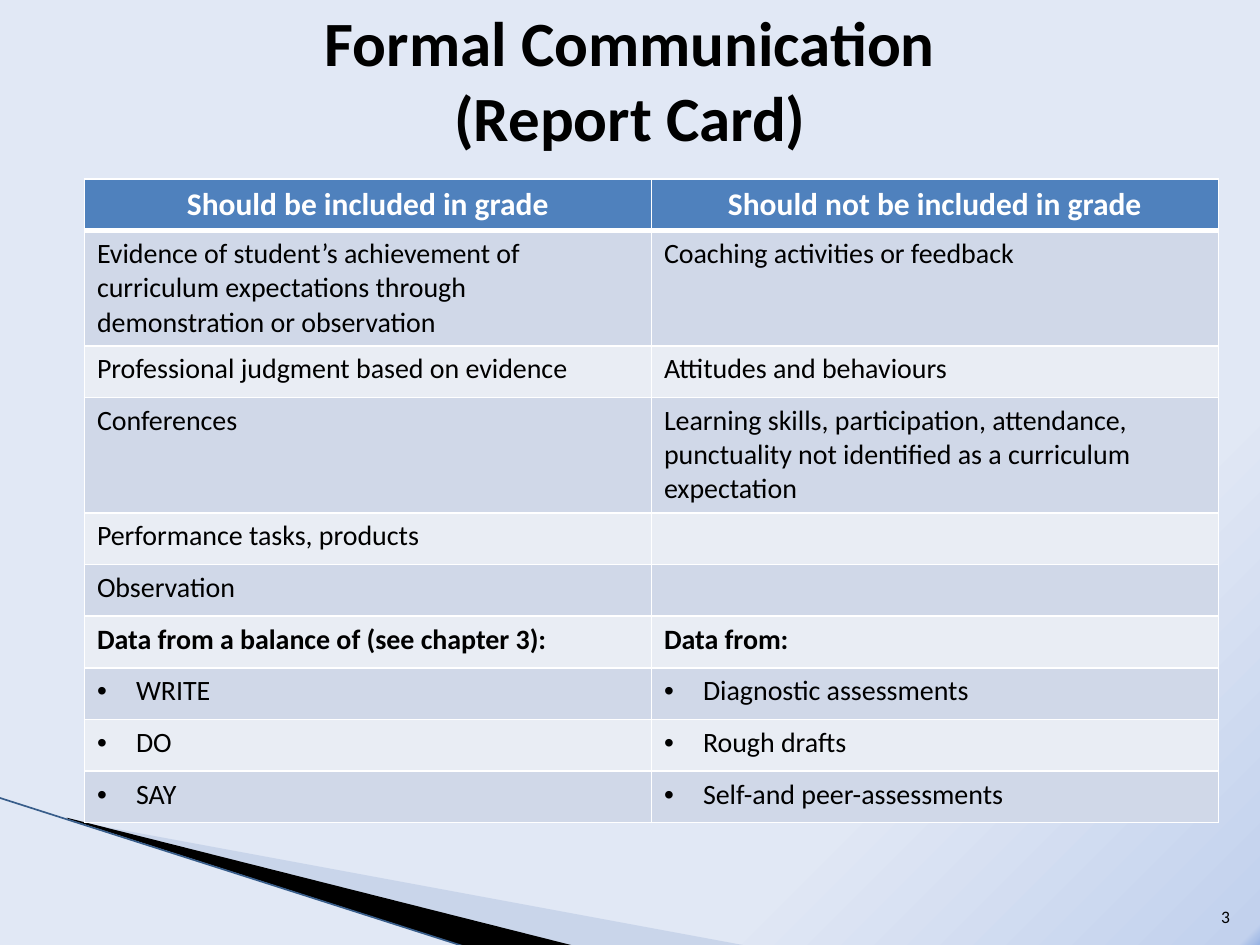
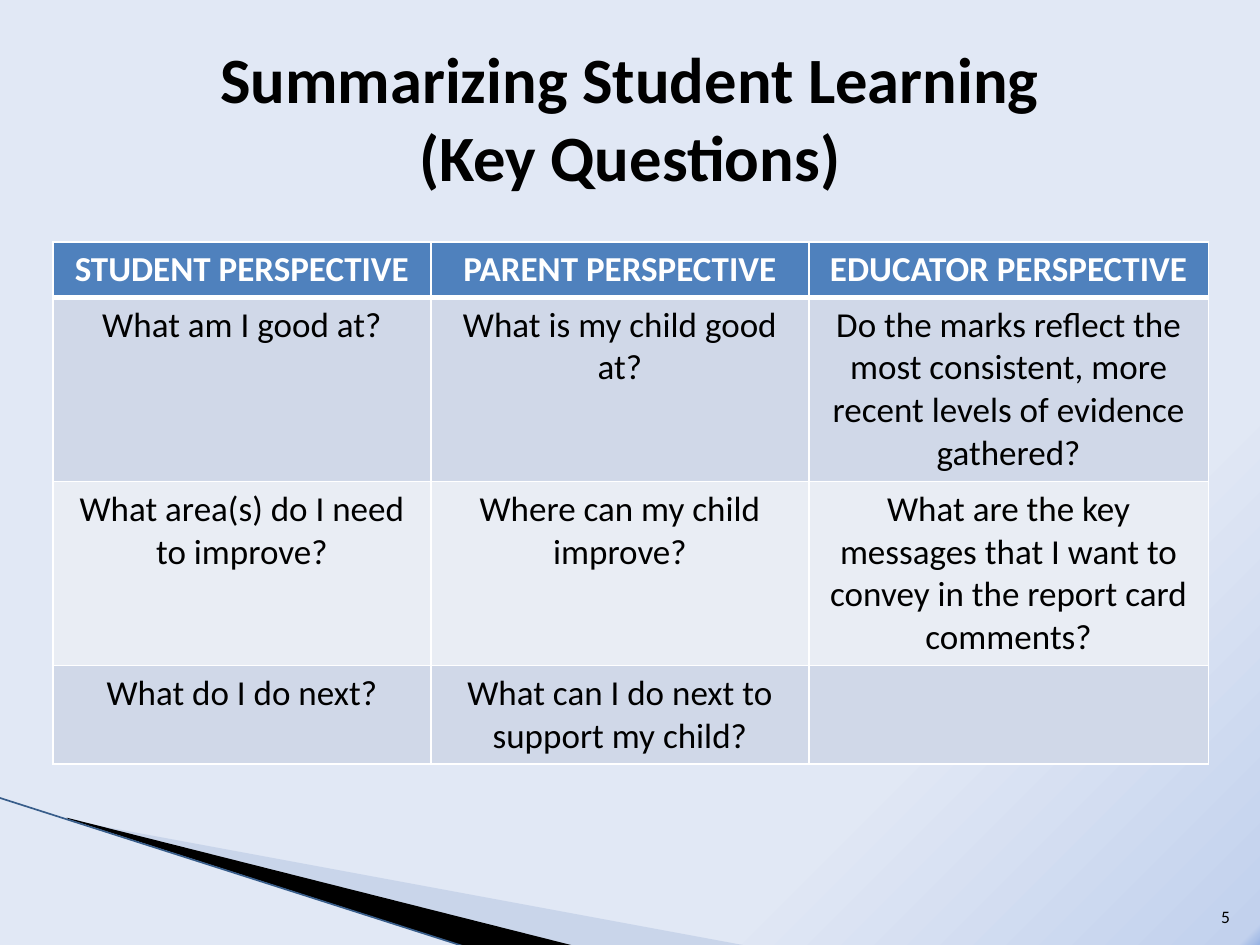
"""Build two slides on reporting student learning."""
from dataclasses import dataclass

from pptx import Presentation
from pptx.dml.color import RGBColor
from pptx.enum.shapes import MSO_CONNECTOR
from pptx.enum.text import MSO_ANCHOR, MSO_AUTO_SIZE, PP_ALIGN
from pptx.oxml import parse_xml
from pptx.oxml.ns import nsdecls, qn
from pptx.util import Inches, Pt

FONT = "Calibri"
ROW_HEIGHT = Inches(0.41)
COLORS = {
    "text": "000000",
    "white": "FFFFFF",
    "header": "4F81BD",
    "odd_row": "D0D8E8",
    "even_row": "E9EDF4",
    "pale_wedge": "A7B9DB",
    "edge": "385D8A",
}
BACKGROUND_STOPS = ((0, "9AB5E4"), (1, "C2D1ED"), (25, "E1E8F5"))


@dataclass(frozen=True)
class Wedge:
    points: tuple
    color: str
    opacity: int = 100


@dataclass(frozen=True)
class Grid:
    left: float
    top: float
    widths: tuple
    rows: tuple
    header_size: int
    body_size: int
    body_align: PP_ALIGN = PP_ALIGN.LEFT
    bold_rows: tuple = ()
    bullet_rows: tuple = ()


@dataclass(frozen=True)
class Topic:
    title: str
    title_top: float
    title_size: float
    number: str
    grid: Grid


WEDGES = (
    Wedge(((0.55, 6.51), (5.95, 7.51), (4.56, 7.51), (0.55, 6.5)), "pale_wedge", 40),
    Wedge(((0.53, 6.49), (4.57, 7.51), (3.72, 7.52), (0.54, 6.5)), "text"),
)

TOPICS = (
    Topic(
        "Formal Communication\v(Report Card)", 0, 36, "3",
        Grid(
            0.67, 1.42, (4.5, 4.5),
            (
                ("Should be included in grade", "Should not be included in grade"),
                ("Evidence of student’s achievement of curriculum expectations "
                 "through demonstration or observation",
                 "Coaching activities or feedback"),
                ("Professional judgment based on evidence", "Attitudes and behaviours"),
                ("Conferences",
                 "Learning skills, participation, attendance, punctuality not "
                 "identified as a curriculum expectation"),
                ("Performance tasks, products", ""),
                ("Observation", ""),
                ("Data from a balance of (see chapter 3):", "Data from:"),
                ("WRITE", "Diagnostic assessments"),
                ("DO", "Rough drafts"),
                ("SAY", "Self-and peer-assessments"),
            ),
            header_size=18, body_size=16, bold_rows=(6,), bullet_rows=(7, 8, 9),
        ),
    ),
    Topic(
        "Summarizing Student Learning\v(Key Questions)", 0.3, 36.9, "5",
        Grid(
            0.42, 1.92, (3, 3, 3.17),
            (
                ("STUDENT PERSPECTIVE", "PARENT PERSPECTIVE", "EDUCATOR PERSPECTIVE"),
                ("What am I good at?", "What is my child good at?",
                 "Do the marks reflect the most consistent, more recent levels of "
                 "evidence gathered?"),
                ("What area(s) do I need to improve?", "Where can my child improve?",
                 "What are the key messages that I want to convey in the report card "
                 "comments?"),
                ("What do I do next?", "What can I do next to support my child?", ""),
            ),
            header_size=20, body_size=20, body_align=PP_ALIGN.CENTER,
        ),
    ),
)


def rgb(name: str) -> RGBColor:
    return RGBColor.from_string(COLORS[name])


def style_text(para, size: float, align: PP_ALIGN, bold: bool = False,
               color: str = "text") -> None:
    para.alignment = align
    for span in para.runs:
        span.font.name = FONT
        span.font.size = Pt(size)
        span.font.bold = bold
        span.font.color.rgb = rgb(color)


def set_background(master) -> None:
    fill = master.background.fill
    fill.gradient()
    gradient = master.element.find(f".//{qn('p:bgPr')}/{qn('a:gradFill')}")
    stops = "".join(
        f'<a:gs pos="{percent * 1000}"><a:srgbClr val="{color}"/></a:gs>'
        for percent, color in BACKGROUND_STOPS
    )
    gradient.getparent().replace(gradient, parse_xml(
        f'<a:gradFill {nsdecls("a")} rotWithShape="1"><a:gsLst>{stops}</a:gsLst>'
        '<a:path path="circle"><a:fillToRect l="100000" t="100000"/></a:path>'
        "</a:gradFill>"
    ))


def draw_wedge(page, wedge: Wedge) -> None:
    points = [(Inches(x), Inches(y)) for x, y in wedge.points]
    builder = page.shapes.build_freeform(*points[0])
    builder.add_line_segments(points[1:], close=True)
    shape = builder.convert_to_shape()
    shape.shadow.inherit = False
    shape.line.fill.background()
    shape.fill.solid()
    shape.fill.fore_color.rgb = rgb(wedge.color)
    if wedge.opacity < 100:
        color = shape.element.spPr.find(f"{qn('a:solidFill')}/{qn('a:srgbClr')}")
        color.append(parse_xml(
            f'<a:alpha {nsdecls("a")} val="{wedge.opacity * 1000}"/>'))


def draw_corner(page) -> None:
    for wedge in WEDGES:
        draw_wedge(page, wedge)
    edge = page.shapes.add_connector(
        MSO_CONNECTOR.STRAIGHT, Inches(-0.01), Inches(6.33), Inches(3.71), Inches(7.52))
    edge.line.color.rgb = rgb("edge")
    edge.line.width = Pt(0.95)
    edge.element.spPr.append(parse_xml(f'<a:effectLst {nsdecls("a")}/>'))


def set_borders(cell, bottom: float) -> None:
    properties = cell._tc.get_or_add_tcPr()
    for side, width in (("L", 1), ("R", 1), ("T", 1), ("B", bottom)):
        properties.append(parse_xml(
            f'<a:ln{side} {nsdecls("a")} w="{Pt(width)}"><a:solidFill>'
            f'<a:srgbClr val="{COLORS["white"]}"/></a:solidFill></a:ln{side}>'))


def add_bullet(para) -> None:
    properties = para._p.get_or_add_pPr()
    properties.set("marL", str(Inches(0.31)))
    properties.set("indent", str(-Inches(0.31)))
    properties.append(parse_xml(f'<a:buFont {nsdecls("a")} typeface="Arial"/>'))
    properties.append(parse_xml(f'<a:buChar {nsdecls("a")} char="•"/>'))


def draw_grid(page, grid: Grid) -> None:
    table = page.shapes.add_table(
        len(grid.rows), len(grid.widths), Inches(grid.left), Inches(grid.top),
        Inches(sum(grid.widths)), ROW_HEIGHT * len(grid.rows)).table
    for column, width in zip(table.columns, grid.widths):
        column.width = Inches(width)
    for row, texts in enumerate(grid.rows):
        header = row == 0
        fill_name = "header" if header else "odd_row" if row % 2 else "even_row"
        for column, text in enumerate(texts):
            cell = table.cell(row, column)
            set_borders(cell, 3 if header else 1)
            cell.fill.solid()
            cell.fill.fore_color.rgb = rgb(fill_name)
            cell.text_frame.text = text
            para = cell.text_frame.paragraphs[0]
            if row in grid.bullet_rows:
                add_bullet(para)
            if header:
                style_text(para, grid.header_size, PP_ALIGN.CENTER, True, "white")
            else:
                style_text(para, grid.body_size, grid.body_align, row in grid.bold_rows)


def draw_title(page, topic: Topic) -> None:
    title = page.shapes.title
    title.left, title.top = Inches(0.5), Inches(topic.title_top)
    title.width, title.height = Inches(9), Inches(1.25)
    frame = title.text_frame
    frame.text = topic.title
    frame.auto_size = MSO_AUTO_SIZE.NONE
    frame.vertical_anchor = MSO_ANCHOR.MIDDLE
    style_text(frame.paragraphs[0], topic.title_size, PP_ALIGN.CENTER, True)


def draw_number(page, number: str) -> None:
    box = page.shapes.add_textbox(Inches(9.46), Inches(7.01), Inches(0.4), Inches(0.4))
    frame = box.text_frame
    frame.word_wrap = True
    frame.vertical_anchor = MSO_ANCHOR.BOTTOM
    frame.text = number
    style_text(frame.paragraphs[0], 10, PP_ALIGN.RIGHT)


def main() -> None:
    deck = Presentation()
    deck.slide_width, deck.slide_height = Inches(10), Inches(7.5)
    set_background(deck.slide_master)
    title_only = deck.slide_layouts.get_by_name("Title Only")
    for topic in TOPICS:
        page = deck.slides.add_slide(title_only)
        draw_corner(page)
        draw_grid(page, topic.grid)
        draw_title(page, topic)
        draw_number(page, topic.number)
    deck.save("out.pptx")


if __name__ == "__main__":
    main()
